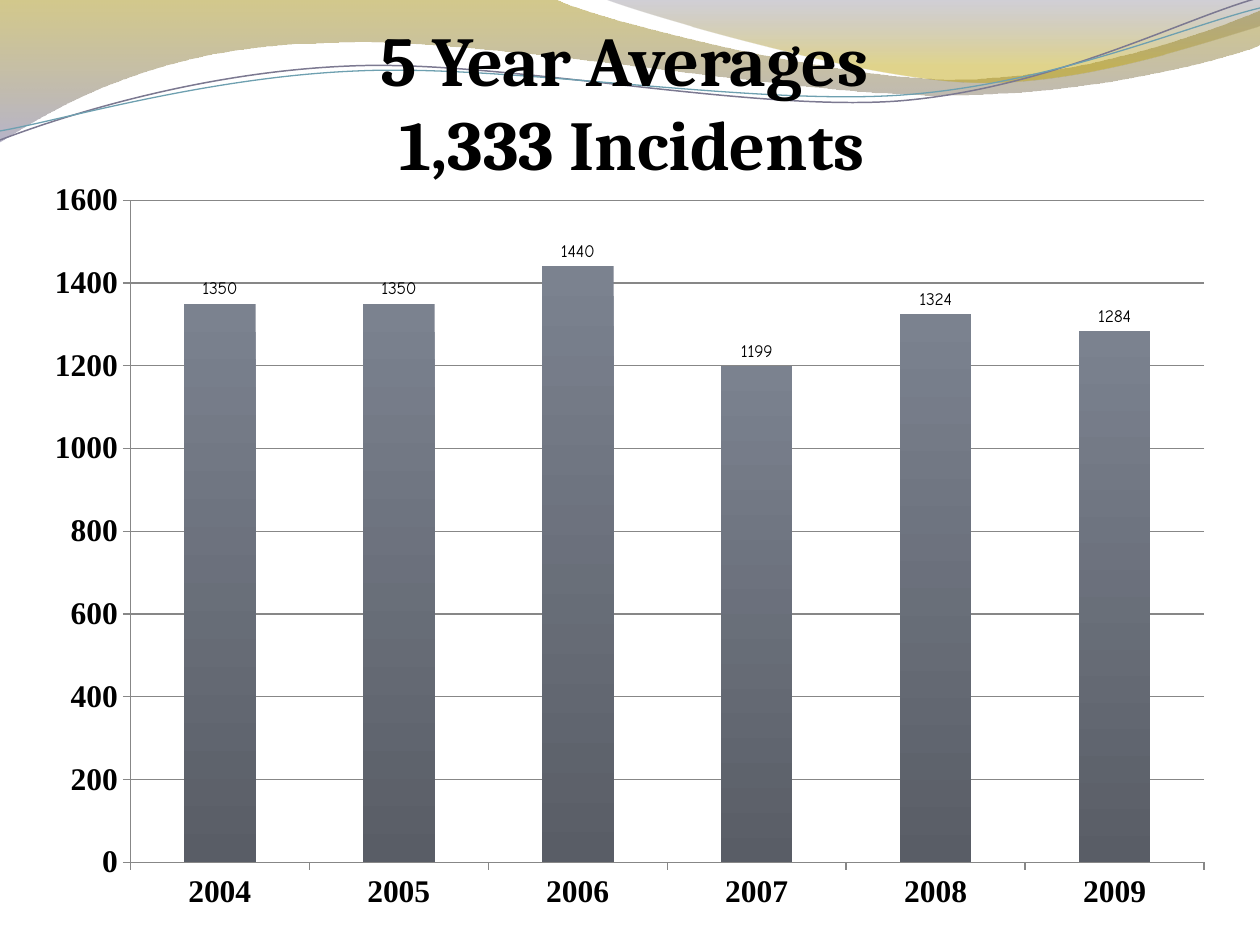
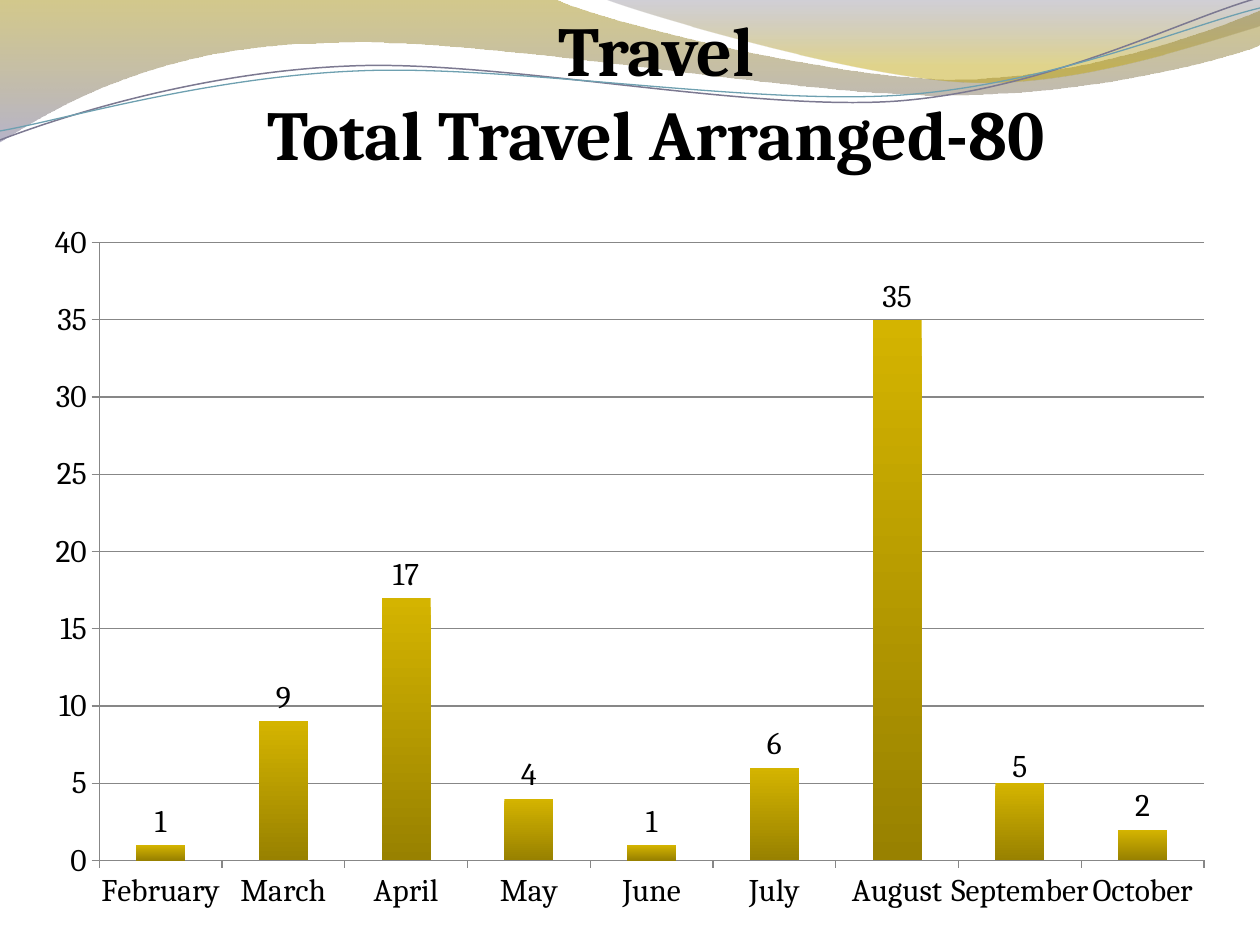
from lxml import etree
from pptx import Presentation
from pptx import util as u
from pptx.chart.data import CategoryChartData
from pptx.dml.color import RGBColor
from pptx.enum import chart as charts, text
from pptx.oxml.ns import qn

PX = 914400 / 126  # EMU in one px

BLACK = RGBColor(0, 0, 0)
OUTLINE_GRAY = RGBColor(0x4D, 0x4D, 0x4D)
GRID_GRAY = RGBColor(0x87, 0x87, 0x87)
OLIVE = RGBColor(0x9E, 0x87, 0x00)
LILAC = RGBColor(0x7B, 0x76, 0x9C)
VIOLET = RGBColor(0x66, 0x62, 0x7C)
GOLD = RGBColor(0xBD, 0xA1, 0x00)
MAUVE = RGBColor(0x7C, 0x79, 0x91)
TEAL = RGBColor(0x6E, 0xA0, 0xB0)
SLATE_BARS = (RGBColor(0x7B, 0x82, 0x8F), RGBColor(0x59, 0x5D, 0x66))
GOLD_BARS = (RGBColor(0xD4, 0xB4, 0x00), RGBColor(0x98, 0x81, 0x00))
TITLE_FONT = "Cambria"

# Wave outlines in px: a start, then points for lines (2 numbers) or curves (6)
WIDE_WAVE = [(-1, -1), (554, -1), (600, 21, 837, 79, 955, 79),
             (1075, 79, 1207, 33, 1260, 11), (1261, 45),
             (1239, 55, 1096, 96, 940, 95), (784, 95, 481, 35, 324, 43),
             (163, 45, 58, 105, -1, 142)]
CORNER_WAVE = [(604, -1), (641, 14, 859, 78, 969, 82),
               (1079, 87, 1211, 40, 1260, 26), (1260, -1)]
MAUVE_LINE = [(0, 140), (60, 117, 199, 72, 349, 66),
              (498, 59, 747, 112, 898, 101), (1050, 89, 1182, 19, 1258, -2)]
TEAL_LINE = [(0, 131), (59, 121, 207, 77, 357, 71),
             (508, 64, 752, 106, 903, 95), (1053, 84, 1186, 26, 1260, 8)]


def emu(px):
    return u.Emu(round(px * PX))


def fill_gradient(fill, stops):
    """Fill from top to bottom with two (position, colour) stops."""
    fill.gradient()
    fill.gradient_angle = 270
    for gradient_stop, (position, color) in zip(fill.gradient_stops, stops):
        gradient_stop.position = position
        gradient_stop.color.rgb = color


def add_wave(shapes, outline, closed):
    """Join the end points by lines, then bend the lines that are curves."""
    ends = [(emu(part[-2]), emu(part[-1])) for part in outline]
    builder = shapes.build_freeform(*ends[0])
    builder.add_line_segments(ends[1:], close=closed)
    shape = builder.convert_to_shape()
    shape.shadow.inherit = False
    lines = list(shape.element.iter(qn("a:lnTo")))
    for line, part in zip(lines, outline[1:]):
        if len(part) == 6:
            line.tag = qn("a:cubicBezTo")
            for index, (x, y) in enumerate((part[:2], part[2:4])):
                point = etree.Element(qn("a:pt"), x=str(emu(x) - shape.left),
                                      y=str(emu(y) - shape.top))
                line.insert(index, point)
    return shape


def add_band(shapes, outline, stops, alphas):
    shape = add_wave(shapes, outline, True)
    shape.line.fill.background()
    fill_gradient(shape.fill, stops)
    for color, alpha in zip(shape.element.iter(qn("a:srgbClr")), alphas):
        etree.SubElement(color, qn("a:alpha"), val=str(alpha * 1000))
    return shape


def add_wave_line(shapes, outline, color, width):
    shape = add_wave(shapes, outline, False)
    shape.fill.background()
    shape.line.color.rgb = color
    shape.line.width = u.Pt(width)
    return shape


def decorate_layout(slide, layout):
    """Draw the waves and move them into the layout, behind its placeholders."""
    waves = [
        add_band(slide.shapes, WIDE_WAVE, [(0, OLIVE), (1, LILAC)], (45, 55)),
        add_band(slide.shapes, CORNER_WAVE, [(0, VIOLET), (0.8, GOLD)], (30, 45)),
        add_wave_line(slide.shapes, MAUVE_LINE, MAUVE, 0.85),
        add_wave_line(slide.shapes, TEAL_LINE, TEAL, 0.75),
    ]
    for index, wave in enumerate(waves):
        wave.element.nvSpPr.cNvPr.set("id", str(100 + index))
        layout.shapes.element.insert(2 + index, wave.element)


def set_title(slide, box, lines):
    title = slide.shapes.title
    title.left, title.top, title.width, title.height = map(emu, box)
    frame = title.text_frame
    frame.text = "\n".join(lines)
    frame.word_wrap = True
    frame.auto_size = text.MSO_AUTO_SIZE.SHAPE_TO_FIT_TEXT
    frame.vertical_anchor = text.MSO_ANCHOR.TOP
    for paragraph in frame.paragraphs:
        paragraph.alignment = text.PP_ALIGN.CENTER
        for run in paragraph.runs:
            set_font(run.font, TITLE_FONT, 40, True)
            # Thin letter outline, which must come before the fill
            outline = etree.Element(qn("a:ln"), w=str(u.Pt(0.9)))
            solid = etree.SubElement(outline, qn("a:solidFill"))
            etree.SubElement(solid, qn("a:srgbClr"), val=str(OUTLINE_GRAY))
            run.font._element.insert(0, outline)


def set_font(font, name, size, bold=False):
    font.name, font.size, font.bold = name, u.Pt(size), bold
    font.color.rgb = BLACK


def set_hairline(line):
    line.color.rgb = GRID_GRAY
    line.width = u.Pt(0)


def add_columns(slide, box, values, bar_colors, label_font, axis_font, top, unit):
    data = CategoryChartData()
    data.categories = list(values)
    data.add_series("Series 1", values.values())
    chart = slide.shapes.add_chart(
        charts.XL_CHART_TYPE.COLUMN_CLUSTERED, *map(emu, box), data).chart
    chart.has_title = chart.has_legend = False
    set_font(chart.font, *label_font)

    # Axes and gridlines
    for axis in (chart.category_axis, chart.value_axis):
        axis.major_tick_mark = charts.XL_TICK_MARK.OUTSIDE
        set_hairline(axis.format.line)
        set_font(axis.tick_labels.font, *axis_font)
    value_axis = chart.value_axis
    value_axis.minimum_scale, value_axis.maximum_scale = 0, top
    value_axis.major_unit = unit
    set_hairline(value_axis.major_gridlines.format.line)

    # Bars and their values
    plot = chart.plots[0]
    plot.gap_width = 150
    plot.vary_by_categories = False
    series = plot.series[0]
    fill_gradient(series.format.fill, zip((0, 1), bar_colors))
    labels = series.data_labels
    labels.show_value = True
    labels.position = charts.XL_LABEL_POSITION.OUTSIDE_END
    set_font(labels.font, *label_font)
    return chart


def lower_label(chart, index, offset, font):
    """Shift one value label down by a share of the chart height."""
    series = chart.plots[0].series[0]
    label = series.points[index].data_label
    set_font(label.font, *font)
    label.position = charts.XL_LABEL_POSITION.OUTSIDE_END
    label_element = next(series._element.iter(qn("c:dLbl")))
    layout = etree.Element(qn("c:layout"))
    manual = etree.SubElement(layout, qn("c:manualLayout"))
    for tag, value in (("c:x", 0), ("c:y", offset)):
        etree.SubElement(manual, qn(tag), val=str(value))
    label_element.insert(1, layout)


def build_incidents(slide):
    set_title(slide, (136, 10, 977, 183), ["5 Year Averages", " 1,333 Incidents"])
    incidents = {"2004": 1350, "2005": 1350, "2006": 1440,
                 "2007": 1199, "2008": 1324, "2009": 1284}
    add_columns(slide, (31, 168, 1197, 756), incidents, SLATE_BARS,
                ("Comic Neue", 10), ("Times New Roman", 18, True), 1600, 200)


def build_travel(slide):
    set_title(slide, (220, 0, 857, 183), [" Travel", " Total Travel Arranged-80"])
    trips = {"February": 1, "March": 9, "April": 17, "May": 4, "June": 1,
             "July": 6, "August": 35, "September": 5, "October": 2}
    font = (TITLE_FONT, 18)
    chart = add_columns(slide, (31, 210, 1197, 714), trips, GOLD_BARS,
                        font, font, 40, 5)
    lower_label(chart, list(trips).index("September"), 0.01, font)


def main():
    presentation = Presentation()
    presentation.slide_width, presentation.slide_height = emu(1260), emu(945)
    layout = presentation.slide_layouts[5]  # title only
    for number, build in enumerate((build_incidents, build_travel)):
        slide = presentation.slides.add_slide(layout)
        if number == 0:
            decorate_layout(slide, layout)
        build(slide)
    presentation.save("out.pptx")


if __name__ == "__main__":
    main()
